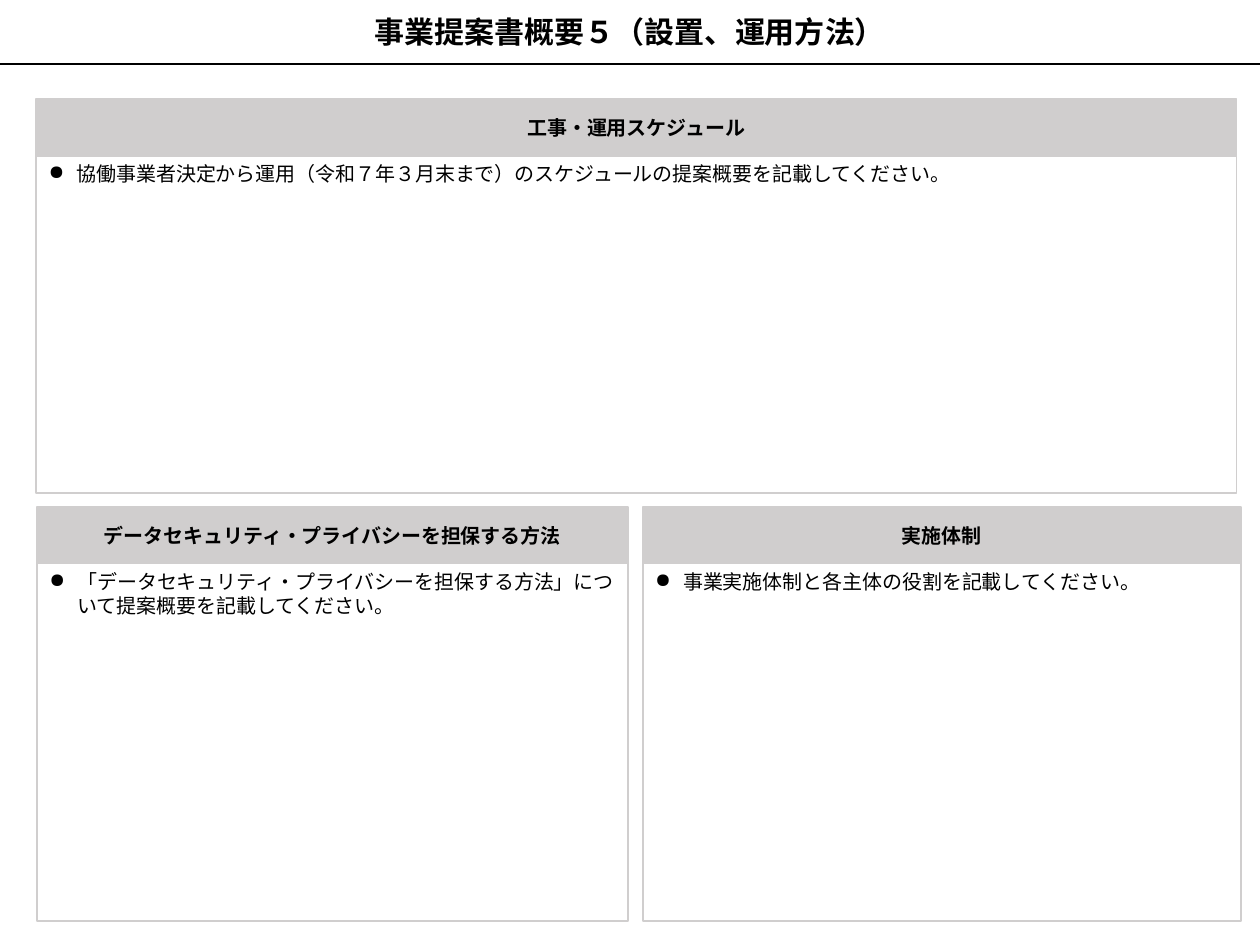
from lxml.etree import SubElement
from pptx import Presentation
from pptx.dml.color import RGBColor
from pptx.enum.shapes import MSO_CONNECTOR, MSO_SHAPE
from pptx.enum.text import MSO_ANCHOR, PP_ALIGN
from pptx.oxml.ns import qn
from pptx.util import Inches, Pt

WIDTH, HEIGHT = 14, 10.5
TITLE = "事業提案書概要５（設置、運用方法）"
TITLE_H, HEAD_H = 0.71, 0.63
INK, PAPER, GREY = "000000", "FFFFFF", "D0CECE"
PANELS = [
    ("実施体制", "事業実施体制と各主体の役割を記載してください。",
     (7.14, 5.63, 6.65, 4.6)),
    ("データセキュリティ・プライバシーを担保する方法",
     "「データセキュリティ・プライバシーを担保する方法」について提案概要を記載してください。",
     (0.41, 5.63, 6.57, 4.6)),
    ("工事・運用スケジュール",
     "協働事業者決定から運用（令和７年３月末まで）のスケジュールの提案概要を記載してください。",
     (0.4, 1.1, 13.34, 4.38)),
]
INSETS = {"margin_left": 0.14, "margin_right": 0.14,
          "margin_top": 0.07, "margin_bottom": 0.07}
TITLE_FONT = {"name": "Arial", "size": Pt(24), "bold": True}
HEAD_FONT = {"name": "Calibri", "size": Pt(16), "bold": True}
BODY_FONT = {"name": "Calibri", "size": Pt(16), "bold": False}


def rgb(value):
    return RGBColor.from_string(value)


def add_box(s, text, box, fill, line, weight, font, insets, wrap=True):
    sp = s.shapes.add_shape(MSO_SHAPE.RECTANGLE, *map(Inches, box))
    sp.shadow.inherit = False
    sp.fill.solid()
    sp.fill.fore_color.rgb = rgb(fill)
    sp.line.color.rgb = rgb(line)
    sp.line.width = Pt(weight)
    tf = sp.text_frame
    tf.word_wrap = wrap
    tf.vertical_anchor = MSO_ANCHOR.MIDDLE
    for name, value in insets.items():
        setattr(tf, name, Inches(value))
    p = tf.paragraphs[0]
    p.alignment = PP_ALIGN.CENTER
    r = p.add_run()
    r.text = text
    for name, value in font.items():
        setattr(r.font, name, value)
    r.font.color.rgb = rgb(INK)
    return tf


def add_bullet(tf, char="●", indent=0.31):
    tf.vertical_anchor = MSO_ANCHOR.TOP
    p = tf.paragraphs[0]
    p.alignment = PP_ALIGN.LEFT
    p.space_before = Pt(6)
    pPr = p._p.get_or_add_pPr()
    pPr.set("marL", str(Inches(indent)))
    pPr.set("indent", str(-Inches(indent)))
    SubElement(pPr, qn("a:buChar")).set("char", char)


def add_panel(s, heading, body, box):
    x, y, w, h = box
    add_box(s, heading, (x, y, w, HEAD_H), GREY, GREY, 1.5, HEAD_FONT, INSETS, wrap=False)
    add_bullet(add_box(s, body, (x, y + HEAD_H, w, h - HEAD_H),
                       PAPER, GREY, 1.5, BODY_FONT, INSETS))


def main():
    """Build the proposal summary slide: a title band and three headed panels."""
    prs = Presentation()
    prs.slide_width, prs.slide_height = Inches(WIDTH), Inches(HEIGHT)
    s = prs.slides.add_slide(prs.slide_layouts[6])
    add_box(s, TITLE, (0, 0, WIDTH, TITLE_H), PAPER, PAPER, 1, TITLE_FONT, {})
    rule = s.shapes.add_connector(MSO_CONNECTOR.STRAIGHT, 0, Inches(TITLE_H),
                                  Inches(WIDTH), Inches(TITLE_H))
    rule.line.color.rgb = rgb(INK)
    rule.line.width = Pt(1.5)
    SubElement(rule._element.spPr, qn("a:effectLst"))
    for panel in PANELS:
        add_panel(s, *panel)
    prs.save("out.pptx")


if __name__ == "__main__":
    main()
